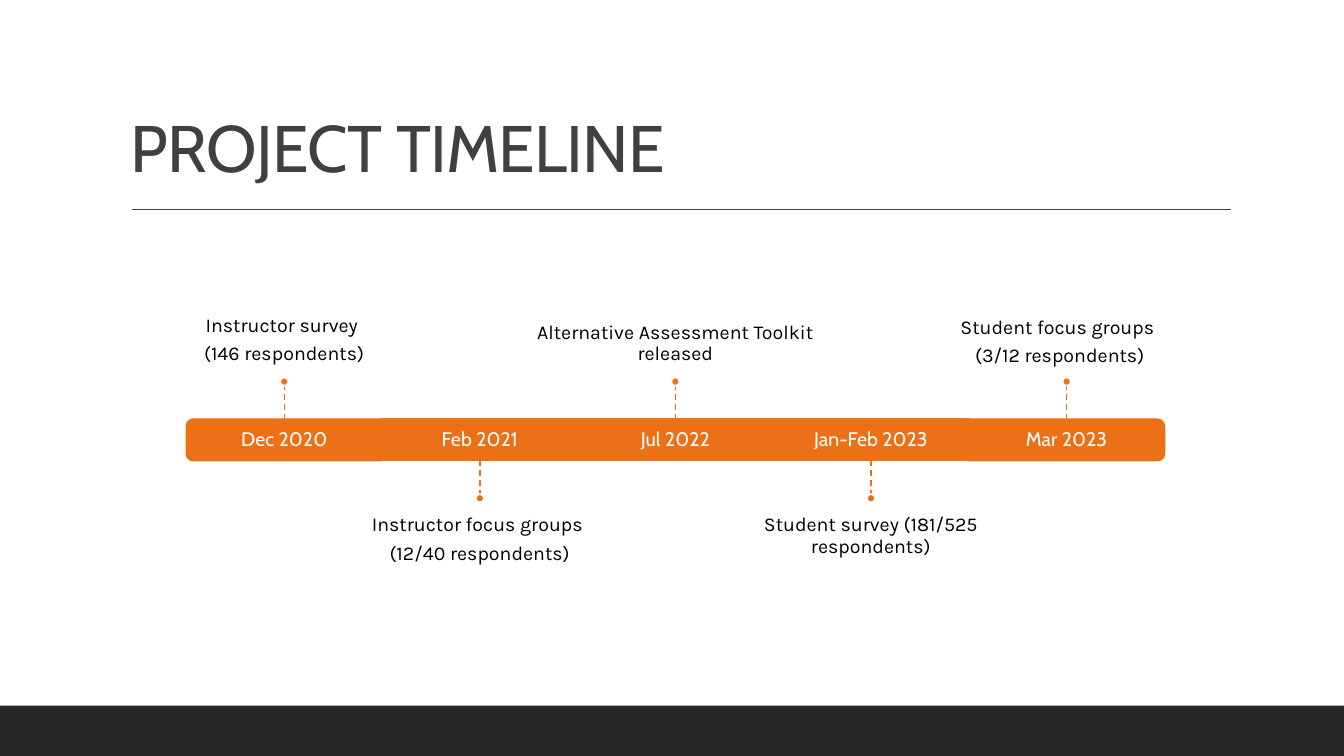
from pptx import Presentation
from pptx.dml.color import RGBColor
from pptx.enum.dml import MSO_LINE
from pptx.enum.shapes import MSO_CONNECTOR, MSO_SHAPE as Preset
from pptx.enum.text import MSO_ANCHOR as Anchor, PP_ALIGN as Align
from pptx.oxml.ns import qn
from pptx.util import Pt
from lxml.etree import SubElement

ORANGE, WHITE, BLACK = "EC7016", "FFFFFF", "000000"
CHARCOAL, NEAR_BLACK = "404040", "262626"
BAR_LEFT, BAR_TOP, BAR_HEIGHT, STEP = 133.2, 299.5, 29.5, 139.7
STEM, DOT = 24, 5.8
LABEL_WIDTH, LABEL_HEIGHT = 232.5, 104.4

# Month, description lines, above the bar?
EVENTS = [
    ("Dec 2020", ["Instructor survey ", "(146 respondents)"], True),
    ("Feb 2021", ["Instructor focus groups ", "(12/40 respondents)"], False),
    ("Jul 2022", ["Alternative Assessment Toolkit released"], True),
    ("Jan-Feb 2023", ["Student survey (181/525 respondents)"], False),
    ("Mar 2023", ["Student focus groups ", "(3/12 respondents)"], True),
]


def color(value):
    return RGBColor.from_string(value)


def add_box(page, preset, left, top, width, height, fill, outline=None):
    box = page.shapes.add_shape(preset, Pt(left), Pt(top), Pt(width), Pt(height))
    box.shadow.inherit = False
    box.fill.solid()
    box.fill.fore_color.rgb = color(fill)
    if outline:
        box.line.color.rgb = color(outline)
        box.line.width = Pt(1.25)
    else:
        box.line.fill.background()
    return box


def add_line(page, start, end, stroke, dash=None):
    line = page.shapes.add_connector(
        MSO_CONNECTOR.STRAIGHT, *(Pt(value) for value in (*start, *end)))
    line.line.color.rgb = color(stroke)
    line.line.width = Pt(1)
    if dash:
        line.line.dash_style = dash
    SubElement(line._element.spPr, qn("a:effectLst"))


def add_text(page, lines, left, top, width, height, font, size, ink, anchor,
             insets, align=Align.CENTER, after=4.9, tracking=None):
    box = page.shapes.add_textbox(Pt(left), Pt(top), Pt(width), Pt(height))
    frame = box.text_frame
    frame.word_wrap = True
    frame.vertical_anchor = anchor
    (frame.margin_left, frame.margin_top,
     frame.margin_right, frame.margin_bottom) = (Pt(inset) for inset in insets)
    for index, line in enumerate(lines):
        para = frame.add_paragraph() if index else frame.paragraphs[0]
        para.alignment = align
        para.line_spacing = 0.9
        para.space_after = Pt(after)
        para.font.name = font
        para.font.size = Pt(size)
        para.font.color.rgb = color(ink)
        span = para.add_run()
        span.text = line
        if tracking is not None:
            span._r.get_or_add_rPr().set("spc", str(int(tracking * 100)))


def add_segment(page, index, month):
    left = BAR_LEFT + index * STEP
    if index in (0, len(EVENTS) - 1):
        # End caps are upright shapes turned on their side
        cap = add_box(page, Preset.ROUND_2_SAME_RECTANGLE,
                      left + (STEP - BAR_HEIGHT) / 2,
                      BAR_TOP + (BAR_HEIGHT - STEP) / 2,
                      BAR_HEIGHT, STEP, ORANGE, ORANGE)
        cap.rotation = 90 if index else 270
    else:
        add_box(page, Preset.RECTANGLE, left, BAR_TOP, STEP, BAR_HEIGHT, ORANGE, ORANGE)
    add_text(page, [month], left, BAR_TOP, STEP, BAR_HEIGHT,
             "Cabin", 14, WHITE, Anchor.MIDDLE, (8.6,) * 4)


def add_callout(page, index, lines, above):
    center = BAR_LEFT + (index + 0.5) * STEP
    if above:
        near, far = BAR_TOP, BAR_TOP - STEM
        dot_top, label_top = far - DOT, 164.9
        anchor, insets = Anchor.BOTTOM, (0, 0, 0, 8.6)
    else:
        near, far = BAR_TOP + BAR_HEIGHT, BAR_TOP + BAR_HEIGHT + STEM
        dot_top, label_top = far, 359.3
        anchor, insets = Anchor.TOP, (0, 8.6, 0, 0)
    label_left = center - LABEL_WIDTH / 2
    if index == len(EVENTS) - 1:
        # The last label hangs from its top, slightly left of its marker
        label_left, label_top = 640.8, 218.2
        anchor, insets = Anchor.TOP, (0, 8.6, 0, 0)
    add_text(page, lines, label_left, label_top, LABEL_WIDTH, LABEL_HEIGHT,
             "Karla", 14, BLACK, anchor, insets)
    add_line(page, (center, near), (center, far), ORANGE, MSO_LINE.DASH)
    add_box(page, Preset.OVAL, center - DOT / 2, dot_top, DOT, DOT, ORANGE, WHITE)


def main():
    deck = Presentation()
    deck.slide_width, deck.slide_height = Pt(960), Pt(540)
    page = deck.slides.add_slide(deck.slide_layouts[6])

    # Footer band, title and rule
    add_box(page, Preset.RECTANGLE, 0, 504, 960, 36, NEAR_BLACK)
    add_line(page, (94.3, 149.5), (879, 149.5), CHARCOAL)
    add_text(page, ["PROJECT TIMELINE"], 86.4, 22.3, 792, 114.5, "Cabin", 47,
             CHARCOAL, Anchor.BOTTOM, (7.2, 3.6, 7.2, 3.6), Align.LEFT, 0, -0.5)

    # Timeline
    for index, (month, lines, above) in enumerate(EVENTS):
        add_segment(page, index, month)
        add_callout(page, index, lines, above)

    deck.save("out.pptx")


if __name__ == "__main__":
    main()
